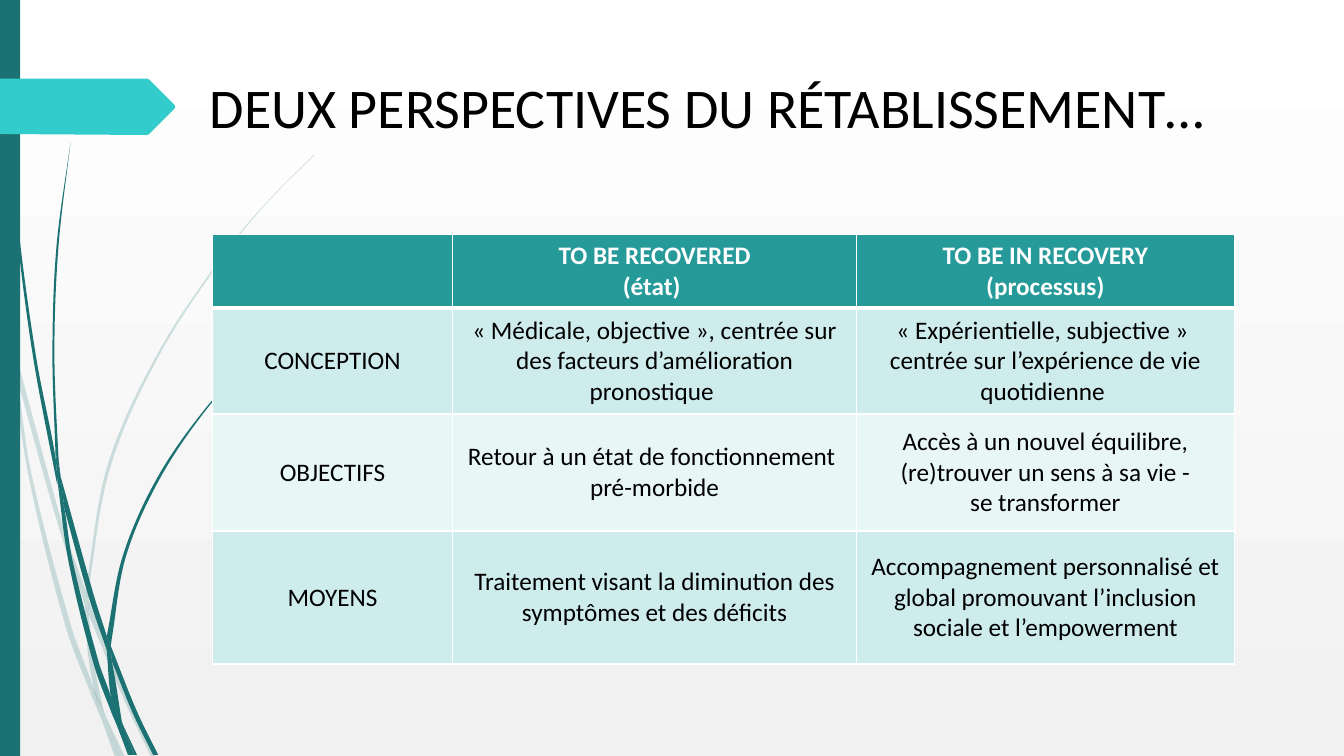
from lxml.etree import SubElement
from pptx import Presentation
from pptx.dml.color import RGBColor
from pptx.enum.shapes import MSO_SHAPE as Preset
from pptx.enum.text import MSO_ANCHOR as Anchor, PP_ALIGN as Align
from pptx.oxml.ns import qn
from pptx.util import Cm, Pt

INCH = 2.54
DARK_TEAL, TEAL, AQUA = "1C7272", "269999", "33CCCC"
BLACK, WHITE = "000000", "FFFFFF"
BANDS = ["CEECEC", "E8F6F6"]

PALE_BLADES = [
    ([(0, 2.82), (.09, 3.22), (.11, 3.5)], [(.1, 3.44), (0, 2.99)]),
    ([(.14, 3.45), (.62, 5.2), (.85, 5.86)], [(.84, 5.99), (.58, 5.22), (.17, 3.76)]),
    ([(.88, 5.96), (1.27, 6.92), (1.55, 7.51)], [(1.5, 7.51), (1.23, 6.94), (.88, 6.1)]),
    ([(1.05, 7.11), (1.24, 7.51)], [(1.19, 7.51), (1.05, 7.11)]),
    ([(.11, 3.5), (.17, 3.76), (.31, 4.69), (.7, 6.19), (.93, 6.83), (1.01, 7.14)],
     [(.92, 6.93), (.65, 6.21), (.28, 4.7), (.11, 3.5)]),
    ([(.84, 5.99), (.88, 6.1), (.91, 6.46), (1.03, 7.06), (1.05, 7.11)],
     [(.96, 6.92), (.93, 6.83), (.87, 6.46), (.84, 5.99)]),
    ([(3.12, 1.54), (2.68, 1.98), (2.29, 2.45), (1.6, 3.49), (1.1, 4.62), (.88, 5.84),
      (.88, 5.96)],
     [(.85, 5.86), (1.07, 4.61), (1.58, 3.48), (2.28, 2.44), (2.68, 1.97), (3.12, 1.53)]),
    ([(1.01, 7.14), (1.19, 7.51)], [(1.14, 7.51), (1.01, 7.14)]),
    ([(.85, 5.86), (.88, 5.96), (.88, 6.1)], [(.84, 5.99), (.85, 5.86)]),
    ([(.93, 6.83), (1.05, 7.11), (1.19, 7.51)], [(1.01, 7.14), (.93, 6.83)]),
]
DARK_BLADES = [
    ([(.04, 0), (.08, 1.09), (.19, 2.32), (.36, 3.55), (.55, 4.53), (.57, 4.81)],
     [(.56, 4.77), (.33, 3.55), (.17, 2.33), (.07, 1.1), (.03, 0)]),
    ([(.6, 4.72), (.93, 5.9), (1.06, 6.31)], [(1.06, 6.45), (.88, 5.92), (.64, 5.05)]),
    ([(1.1, 6.41), (1.36, 7.06), (1.57, 7.49)], [(1.52, 7.49), (1.32, 7.08), (1.11, 6.56)]),
    ([(.57, 4.77), (.64, 5.05), (.72, 5.56), (.98, 6.57), (1.1, 6.91), (1.17, 7.22)],
     [(1.11, 7.08), (.93, 6.59), (.68, 5.57), (.57, 4.77)]),
    ([(.7, 1.41), (.58, 2.45), (.54, 3.49), (.58, 4.53), (.6, 4.72)],
     [(.55, 4.49), (.52, 3.49), (.56, 2.45), (.7, 1.41)]),
    ([(1.22, 7.19), (1.36, 7.49)], [(1.33, 7.49), (1.22, 7.19)]),
    ([(.55, 4.49), (.6, 4.72), (.64, 5.05)], [(.57, 4.77), (.55, 4.49)]),
    ([(2.61, 3.44), (2.05, 4.06), (1.58, 4.76), (1.25, 5.52), (1.11, 6.33), (1.1, 6.41)],
     [(1.06, 6.31), (1.22, 5.51), (1.56, 4.74), (2.04, 4.05), (2.6, 3.44)]),
    ([(1.17, 7.22), (1.31, 7.49)], [(1.27, 7.49), (1.17, 7.22)]),
    ([(1.06, 6.45), (1.11, 6.56), (1.21, 7.16), (1.22, 7.19)],
     [(1.16, 7.06), (1.1, 6.91), (1.06, 6.45)]),
    ([(1.06, 6.31), (1.1, 6.41), (1.11, 6.56)], [(1.06, 6.45), (1.06, 6.31)]),
    ([(1.1, 6.91), (1.22, 7.19), (1.33, 7.49)], [(1.3, 7.49), (1.17, 7.22), (1.1, 6.91)]),
]
ARROW = [(0, .78), (1.46, .78), (1.48, .79), (1.73, 1.04), (1.74, 1.06),
         (1.73, 1.08), (1.48, 1.33), (1.46, 1.34), (0, 1.33)]
PERSPECTIVES = [
    ["", "TO BE RECOVERED\n(état) ", "TO BE IN RECOVERY\n(processus)"],
    ["CONCEPTION",
     "« Médicale, objective », centrée sur des facteurs d’amélioration pronostique ",
     "« Expérientielle, subjective » \ncentrée sur l’expérience de vie quotidienne "],
    ["OBJECTIFS",
     "Retour à un état de fonctionnement \npré-morbide",
     "Accès à un nouvel équilibre, (re)trouver un sens à sa vie -\nse transformer"],
    ["MOYENS",
     "Traitement visant la diminution des symptômes et des déficits",
     "Accompagnement personnalisé et global promouvant l’inclusion sociale et l’empowerment"],
]


def rgb(code):
    return RGBColor.from_string(code)


def bezier(knots):
    """Return two control points and an end point for each step between knots."""
    spots = [complex(*knot) for knot in knots]
    padded = [spots[0], *spots, spots[-1]]
    points = []
    for a, b, c, d in zip(padded, padded[1:], padded[2:], padded[3:]):
        reach = abs(c - b) / 3
        leave, arrive = (c - a) / abs(c - a), (d - b) / abs(d - b)
        points += [b + leave * reach, c - arrive * reach, c]
    return [(point.real, point.imag) for point in points]


def write(frame, text, size=18, color=BLACK, bold=False, font="Calibri"):
    """Fill a text frame with one centred paragraph per line."""
    for number, line in enumerate(text.split("\n")):
        para = frame.add_paragraph() if number else frame.paragraphs[0]
        para.alignment = Align.CENTER
        para.font.size = Pt(size)
        if line:
            span = para.add_run()
            span.text = line
            span.font.name, span.font.size, span.font.bold = font, Pt(size), bold
            span.font.color.rgb = rgb(color)


class Painter:
    """Draws the elements of the current slide in one style."""

    def __init__(self, page):
        self.page = page

    def background(self, top, bottom):
        fill = self.page.background.fill
        fill.gradient()
        fill.gradient_angle = 270
        for stop, color, position in zip(fill.gradient_stops, (top, bottom), (0, 1)):
            stop.color.rgb = rgb(color)
            stop.position = position

    def paint(self, shape, color, opacity=100):
        shape.shadow.inherit = False
        shape.line.fill.background()
        shape.fill.solid()
        shape.fill.fore_color.rgb = rgb(color)
        if opacity < 100:
            tint = shape.fill._xPr.find(qn("a:solidFill"))[0]
            SubElement(tint, qn("a:alpha"), val=str(opacity * 1000))

    def bar(self, left, top, width, height, color):
        box = self.page.shapes.add_shape(
            Preset.RECTANGLE, Cm(left), Cm(top), Cm(width), Cm(height))
        self.paint(box, color)

    def outline(self, points, color, opacity=100):
        start, *rest = [(Cm(x * INCH), Cm(y * INCH)) for x, y in points]
        builder = self.page.shapes.build_freeform(*start)
        builder.add_line_segments(rest, close=True)
        shape = builder.convert_to_shape()
        self.paint(shape, color, opacity)
        return shape

    def blade(self, down, up, color, opacity=100):
        joint = bezier([down[-1], up[0]])
        shape = self.outline([down[0], *bezier(down), *joint, *bezier(up)], color, opacity)
        lines = list(shape._element.iter(qn("a:lnTo")))
        for first, second, third in zip(lines[::3], lines[1::3], lines[2::3]):
            curve = SubElement(first.getparent(), qn("a:cubicBezTo"))
            first.addprevious(curve)
            for line in (first, second, third):
                curve.append(line[0])
                line.getparent().remove(line)

    def title(self, text, left, top, width, height):
        box = self.page.shapes.add_textbox(Cm(left), Cm(top), Cm(width), Cm(height))
        box.text_frame.word_wrap = True
        write(box.text_frame, text, size=40)

    def border(self, cell, side, color, points):
        line = SubElement(cell._tc.get_or_add_tcPr(), qn("a:ln" + side), w=str(Pt(points)))
        SubElement(SubElement(line, qn("a:solidFill")), qn("a:srgbClr"), val=color)

    def table(self, rows, left, top, widths, heights):
        frame = self.page.shapes.add_table(
            len(rows), len(widths), Cm(left), Cm(top), Cm(sum(widths)), Cm(sum(heights)))
        table = frame.table
        for column, width in zip(table.columns, widths):
            column.width = Cm(width)
        for row, height in zip(table.rows, heights):
            row.height = Cm(height)
        for i, texts in enumerate(rows):
            for j, text in enumerate(texts):
                cell = table.cell(i, j)
                cell.vertical_anchor = Anchor.MIDDLE
                for side in "LRTB":
                    heavy = (side, i) in (("B", 0), ("T", 1))
                    self.border(cell, side, WHITE, 3 if heavy else 1)
                cell.fill.solid()
                cell.fill.fore_color.rgb = rgb(BANDS[(i - 1) % 2] if i else TEAL)
                write(cell.text_frame, text, color=BLACK if i else WHITE, bold=i == 0)


def main():
    deck = Presentation()
    deck.slide_width, deck.slide_height = Cm(33.87), Cm(19.05)
    painter = Painter(deck.slides.add_slide(deck.slide_layouts[6]))
    painter.background(WHITE, "F1F1F1")
    for blades, opacity in ((PALE_BLADES, 20), (DARK_BLADES, 100)):
        for down, up in blades:
            painter.blade(down, up, DARK_TEAL, opacity)
    painter.bar(0, 0, 0.51, 19.05, DARK_TEAL)
    painter.outline(ARROW, AQUA)
    painter.title("DEUX PERSPECTIVES DU RÉTABLISSEMENT… ", 4.12, 1.7, 27.71, 3.18)
    painter.table(PERSPECTIVES, 5.35, 5.9, [6.06, 10.17, 9.53], [1.87, 2.66, 2.95, 3.35])
    deck.save("out.pptx")


if __name__ == "__main__":
    main()
